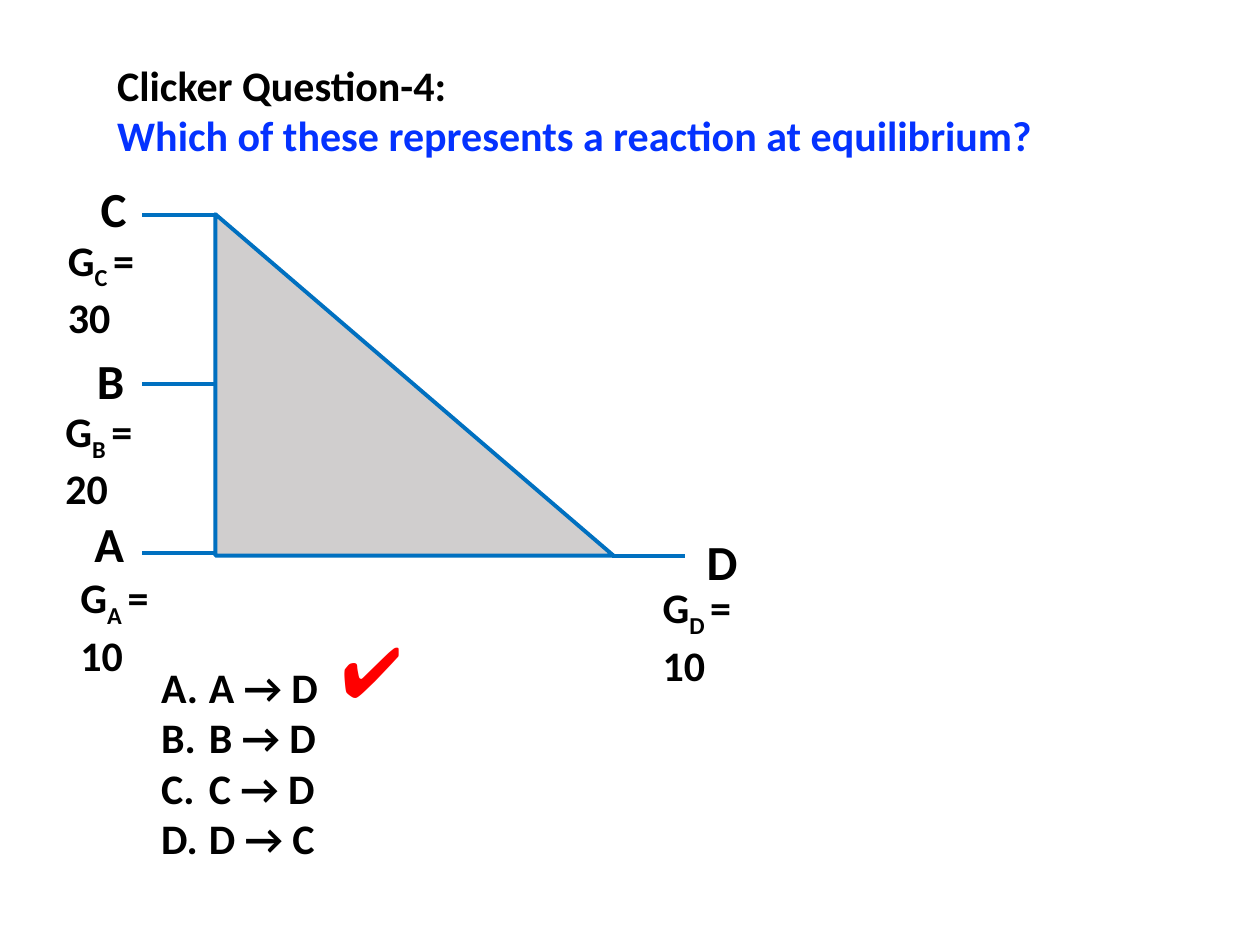
import pptx
import pptx.util
import pptx.dml.color
import pptx.enum.shapes
import pptx.enum.text
import pptx.oxml
from lxml import etree

COLORS = {"text": "000000", "question": "0432FF", "edge": "0070C0",
          "fill": "D0CECE", "tick": "FF0000"}
FONT = "Calibri"
COLS, ROWS = 100, 75


def rgb(name):
    return pptx.dml.color.RGBColor.from_string(COLORS[name])


class SlideBuilder:
    """Holds the style and the slide; places elements in grid columns and rows."""

    def __init__(self, prs):
        self.unit_x = prs.slide_width / COLS
        self.unit_y = prs.slide_height / ROWS
        self.s = prs.slides.add_slide(prs.slide_layouts[5])
        self.shapes = self.s.shapes

    def place(self, *lengths):
        """Turn alternating columns and rows into EMU."""
        units = (self.unit_x, self.unit_y)
        return [round(n * units[i % 2]) for i, n in enumerate(lengths)]

    def style(self, r, size, color="text", bold=True):
        r.font.name = FONT
        r.font.size = pptx.util.Pt(size)
        r.font.bold = bold
        r.font.color.rgb = rgb(color)

    def outline(self, sp):
        sp.line.color.rgb = rgb("edge")
        sp.line.width = pptx.util.Pt(2.25)

    def title(self, box, lines):
        sp = self.s.shapes.title
        sp.left, sp.top, sp.width, sp.height = self.place(*box)
        tf = sp.text_frame
        tf.text = "\n".join(text for text, _ in lines)
        tf.auto_size = pptx.enum.text.MSO_AUTO_SIZE.NONE
        tf.vertical_anchor = pptx.enum.text.MSO_ANCHOR.TOP
        for p, (_, color) in zip(tf.paragraphs, lines):
            p.alignment = pptx.enum.text.PP_ALIGN.LEFT
            self.style(p.runs[0], 24, color)

    def text(self, box, text, size=24, color="text", bold=True):
        tf = self.shapes.add_textbox(*self.place(*box)).text_frame
        tf.word_wrap = True
        tf.text = text
        for p in tf.paragraphs:
            for r in p.runs:
                self.style(r, size, color, bold)
        return tf

    def energy(self, box, state, value):
        """Write a free energy with the state as subscript."""
        p = self.text(box, "G").paragraphs[0]
        for part in (f"{state} ", f"= {value}"):
            r = p.add_run()
            r.text = part
            self.style(r, 24)
        p.runs[1].font._element.set("baseline", "-25000")

    def choices(self, box, options):
        for p in self.text(box, "\n".join(options)).paragraphs:
            pPr = p._p.get_or_add_pPr()
            indent = pptx.util.Inches(0.38)
            pPr.set("marL", str(indent))
            pPr.set("indent", str(-indent))
            number = etree.SubElement(pPr, pptx.oxml.ns.qn("a:buAutoNum"))
            number.set("type", "alphaUcPeriod")

    def triangle(self, box):
        kind = pptx.enum.shapes.MSO_SHAPE.RIGHT_TRIANGLE
        sp = self.shapes.add_shape(kind, *self.place(*box))
        sp.shadow.inherit = False
        sp.fill.solid()
        sp.fill.fore_color.rgb = rgb("fill")
        self.outline(sp)

    def level(self, left, row, width=5.8):
        kind = pptx.enum.shapes.MSO_CONNECTOR.STRAIGHT
        sp = self.shapes.add_connector(
            kind, *self.place(left, row, left + width, row))
        self.outline(sp)
        etree.SubElement(sp._element.spPr, pptx.oxml.ns.qn("a:effectLst"))


def main():
    prs = pptx.Presentation()
    prs.slide_width = pptx.util.Inches(10)
    prs.slide_height = pptx.util.Inches(7.5)
    b = SlideBuilder(prs)
    b.title((8.3, 4.2, 84.2, 9.1), [
        ("Clicker Question-4:", "text"),
        ("Which of these represents a reaction at equilibrium?", "question")])

    # Energy diagram: state, value, label corner, energy text left edge
    b.shapes = b.s.shapes.add_group_shape().shapes
    b.triangle((17.1, 17, 31.6, 27.1))
    for row in (17.1, 30.5, 43.9):
        b.level(11.3, row)
    b.level(48.6, 44.1)
    states = [("D", 10, 55.1, 41.7, 51.6), ("A", 10, 6.5, 40.3, 5.4),
              ("B", 20, 6.7, 27.3, 4.2), ("C", 30, 7, 13.7, 4.4)]
    for state, value, left, top, energy_left in states:
        b.text((left, top, 4.9, 4.1), state, size=28)
        b.energy((energy_left, top + 4.4 - 0.4 * (state == "D"), 7.8, 3.6),
                 state, value) if state != "A" else b.energy(
                     (energy_left, top + 4.6, 7.8, 3.6), state, value)

    b.shapes = b.s.shapes
    b.choices((11.8, 52, 60.8, 17.2),
              [f"{start} → {end}" for start, end in ("AD", "BD", "CD", "DC")])
    b.text((26.1, 49.3, 13.6, 7.7), "✔", size=40, color="tick", bold=False)
    prs.save("out.pptx")


if __name__ == "__main__":
    main()
